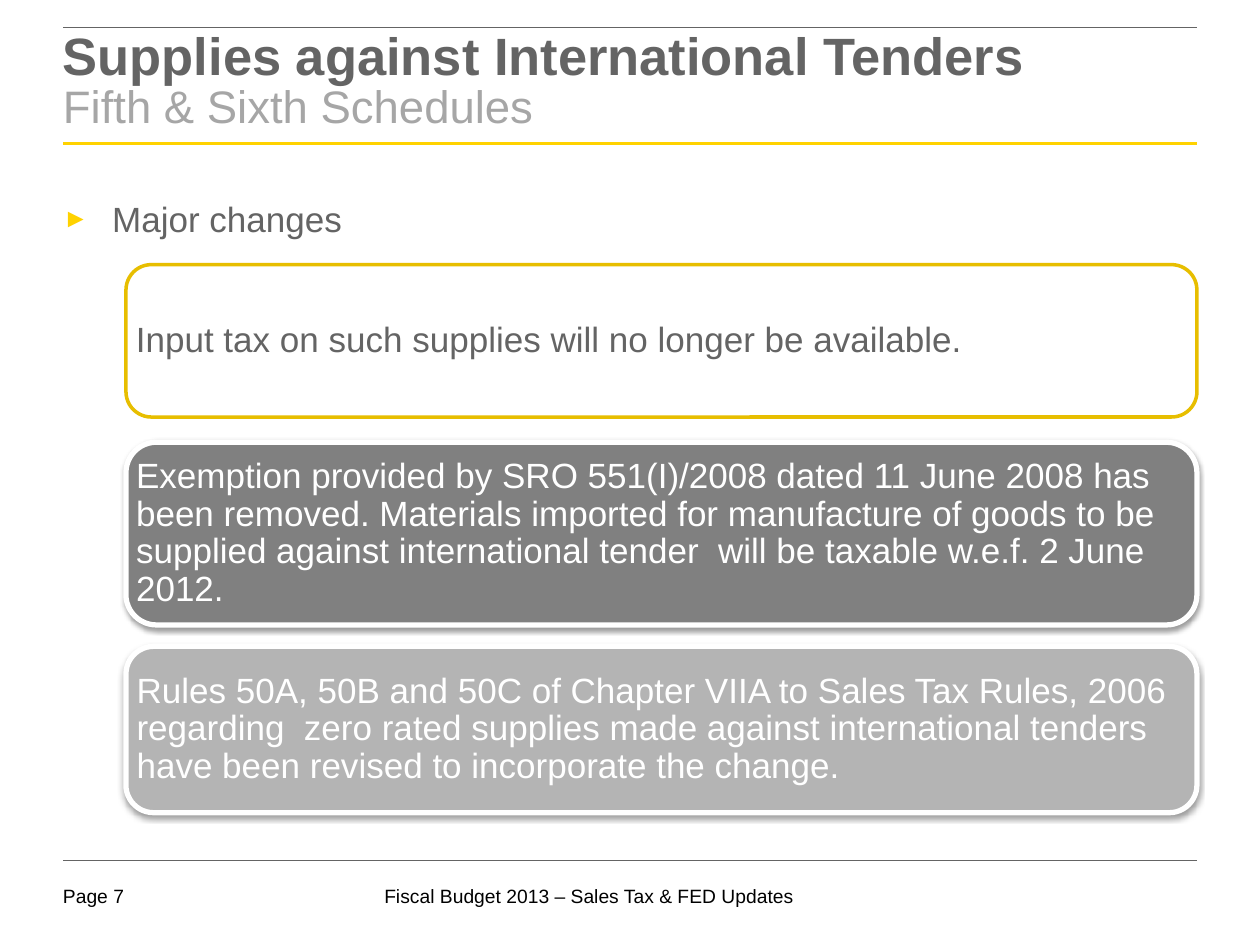
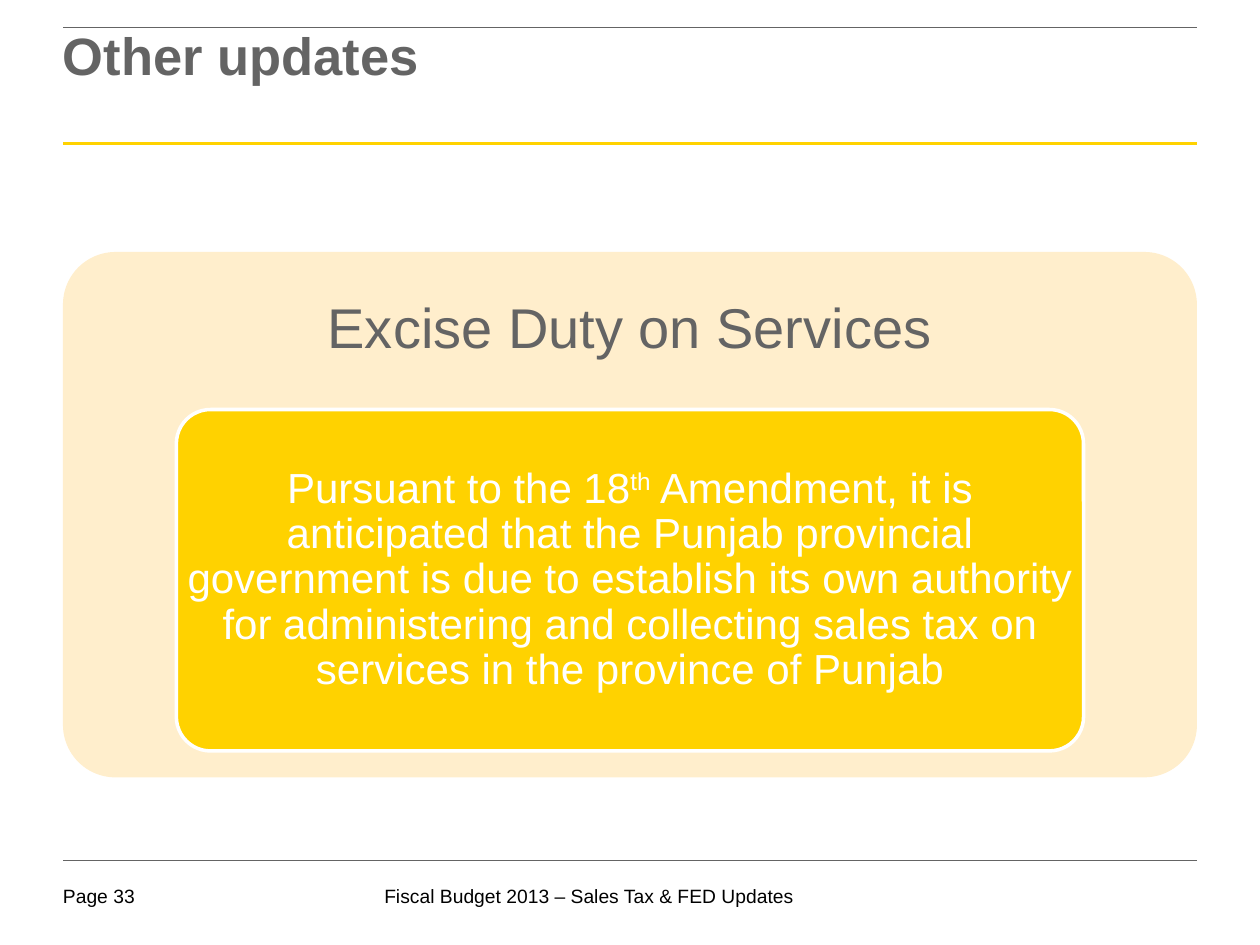
from dataclasses import dataclass

import lxml.etree
import pptx
import pptx.dml.color
import pptx.enum.shapes
import pptx.enum.text
import pptx.oxml
import pptx.oxml.ns
import pptx.util

PX = 9144  # 100 px to the inch
LEFT, RIGHT = 50, 950
WIDTH = RIGHT - LEFT
ROUND_RECT_INSET = 0.29  # share of the corner radius kept free of text

ALIGN = pptx.enum.text.PP_ALIGN
ANCHOR = pptx.enum.text.MSO_ANCHOR


@dataclass(frozen=True)
class Theme:
    font: str = "Arial"
    dark: str = "646464"
    subtitle: str = "A6A6A6"
    yellow: str = "FFD200"
    gold: str = "E7BE00"
    cream: str = "FFEECC"
    card_dark: str = "808080"
    card_light: str = "B4B4B4"
    white: str = "FFFFFF"
    black: str = "000000"
    title_size: int = 30
    subtitle_size: int = 26
    heading_size: int = 32
    panel_size: int = 24
    body_size: int = 20
    footer_size: int = 11


THEME = Theme()


def px(n):
    return pptx.util.Emu(round(n * PX))


def rgb(color):
    return pptx.dml.color.RGBColor.from_string(color)


def sub(parent, tag, **attrs):
    return lxml.etree.SubElement(parent, pptx.oxml.ns.qn(tag), attrs)


def add_run(p, text, size, color, bold=False, superscript=False):
    r = p.add_run()
    r.text = text
    font = r.font
    font.name, font.size, font.bold = THEME.font, pptx.util.Pt(size), bold
    font.color.rgb = rgb(color)
    if superscript:
        r._r.get_or_add_rPr().set("baseline", "30000")


def set_frame(tf, insets=(0, 0, 0, 0), anchor=ANCHOR.TOP, align=ALIGN.LEFT, spacing=None):
    """Lay out a text frame and return its first paragraph."""
    tf.word_wrap = True
    tf.vertical_anchor = anchor
    tf.margin_left, tf.margin_top, tf.margin_right, tf.margin_bottom = map(px, insets)
    p = tf.paragraphs[0]
    p.alignment = align
    if spacing:
        p.line_spacing = spacing
    return p


def add_text(s, x, y, w, h, **layout):
    box = s.shapes.add_textbox(px(x), px(y), px(w), px(h))
    return set_frame(box.text_frame, **layout)


def add_rule(s, y, color, weight):
    line = s.shapes.add_connector(
        pptx.enum.shapes.MSO_CONNECTOR.STRAIGHT, px(LEFT), px(y), px(RIGHT), px(y))
    line.line.color.rgb = rgb(color)
    line.line.width = pptx.util.Pt(weight)
    sub(line._element.spPr, "a:effectLst")


def add_shadow(sp):
    effects = sp._element.spPr.find(pptx.oxml.ns.qn("a:effectLst"))
    shadow = sub(effects, "a:outerShdw", blurRad=str(pptx.util.Pt(3.1)),
                 dist=str(pptx.util.Pt(1.6)), dir="5400000", rotWithShape="0")
    color = sub(shadow, "a:srgbClr", val=THEME.black)
    sub(color, "a:alpha", val="38000")


def add_round_box(s, x, y, w, h, fill, line=None, weight=0, corner=0.1667):
    sp = s.shapes.add_shape(
        pptx.enum.shapes.MSO_SHAPE.ROUNDED_RECTANGLE, px(x), px(y), px(w), px(h))
    sp.adjustments[0] = corner
    sp.shadow.inherit = False
    sp.fill.solid()
    sp.fill.fore_color.rgb = rgb(fill)
    if line:
        sp.line.color.rgb = rgb(line)
        sp.line.width = pptx.util.Pt(weight)
    else:
        sp.line.fill.background()
    return sp


def fill_round_box(sp, inset, align):
    """Start centred text that stands inset px from the outer edge of the box."""
    corner_px = ROUND_RECT_INSET * sp.adjustments[0] * sp.height / PX
    side = max(0, round(inset - corner_px))
    return set_frame(sp.text_frame, (side, 0, side, 0), ANCHOR.MIDDLE, align, 0.9)


def add_bullet(s, y, text):
    p = add_text(s, LEFT, y, WIDTH, 40)
    pPr = p._p.get_or_add_pPr()
    pPr.set("marL", str(px(39)))
    pPr.set("indent", str(px(-39)))
    sub(sub(pPr, "a:buClr"), "a:srgbClr", val=THEME.yellow)
    sub(pPr, "a:buSzPct", val="75000")
    sub(pPr, "a:buFont", typeface=THEME.font)
    sub(pPr, "a:buChar", char="►")
    add_run(p, text, THEME.body_size, THEME.dark)


def add_slide(prs, page, title, subtitle=None):
    """Add a slide with the shared rules, title and footer."""
    s = prs.slides.add_slide(prs.slide_layouts[6])
    for y, color, weight in ((22, THEME.dark, 0.5), (114, THEME.yellow, 1.5),
                             (683, THEME.dark, 0.25)):
        add_rule(s, y, color, weight)

    for x, w, text in ((LEFT, 73, f"Page {page}"),
                       (305, 370, "Fiscal Budget 2013 – Sales Tax & FED Updates")):
        add_run(add_text(s, x, 702, w, 22), text, THEME.footer_size, THEME.black)

    p = add_text(s, LEFT, 22, WIDTH, 94, insets=(0, 4, 0, 0), spacing=0.85)
    add_run(p, title, THEME.title_size, THEME.dark, bold=True)
    if subtitle:
        p.add_line_break()
        add_run(p, subtitle, THEME.subtitle_size, THEME.subtitle)
    return s


def add_tenders_slide(prs):
    s = add_slide(prs, 7, "Supplies against International Tenders", "Fifth & Sixth Schedules")
    add_bullet(s, 157, "Major changes")
    changes = (
        (210, 121, THEME.white, THEME.gold, 2, THEME.dark,
         "Input tax on such supplies will no longer be available."),
        (351, 145, THEME.card_dark, THEME.white, 3, THEME.white,
         "Exemption provided by SRO 551(I)/2008 dated 11 June 2008 has been removed. "
         "Materials imported for manufacture of goods to be supplied against "
         "international tender  will be taxable w.e.f. 2 June 2012."),
        (513, 132, THEME.card_light, THEME.white, 3, THEME.white,
         "Rules 50A, 50B and 50C of Chapter VIIA to Sales Tax Rules, 2006 regarding  "
         "zero rated supplies made against international tenders have been revised "
         "to incorporate the change."),
    )
    for y, h, fill, line, weight, color, text in changes:
        card = add_round_box(s, 100, y, RIGHT - 100, h, fill, line, weight)
        if fill != THEME.white:
            add_shadow(card)
        add_run(fill_round_box(card, 8, ALIGN.LEFT), text, THEME.body_size, color)


def add_updates_slide(prs):
    s = add_slide(prs, 33, "Other updates")
    add_round_box(s, LEFT, 200, WIDTH, 417, THEME.cream, corner=0.1)
    p = add_text(s, LEFT, 200, WIDTH, 125, insets=(13, 13, 13, 13),
                 anchor=ANCHOR.MIDDLE, align=ALIGN.CENTER, spacing=0.9)
    add_run(p, "Excise Duty on Services", THEME.heading_size, THEME.dark)

    panel = add_round_box(s, 140, 325, 720, 271, THEME.yellow, THEME.white, 2, corner=0.1)
    p = fill_round_box(panel, 7, ALIGN.CENTER)
    for text, superscript in (
            ("Pursuant to the 18", False), ("th", True),
            (" Amendment, it is anticipated that the Punjab provincial government is due "
             "to establish its own authority for administering and collecting sales tax "
             "on services in the province of Punjab", False)):
        add_run(p, text, THEME.panel_size, THEME.white, superscript=superscript)


def main():
    prs = pptx.Presentation()
    prs.slide_width, prs.slide_height = px(1000), px(750)
    add_tenders_slide(prs)
    add_updates_slide(prs)
    prs.save("out.pptx")


if __name__ == "__main__":
    main()
